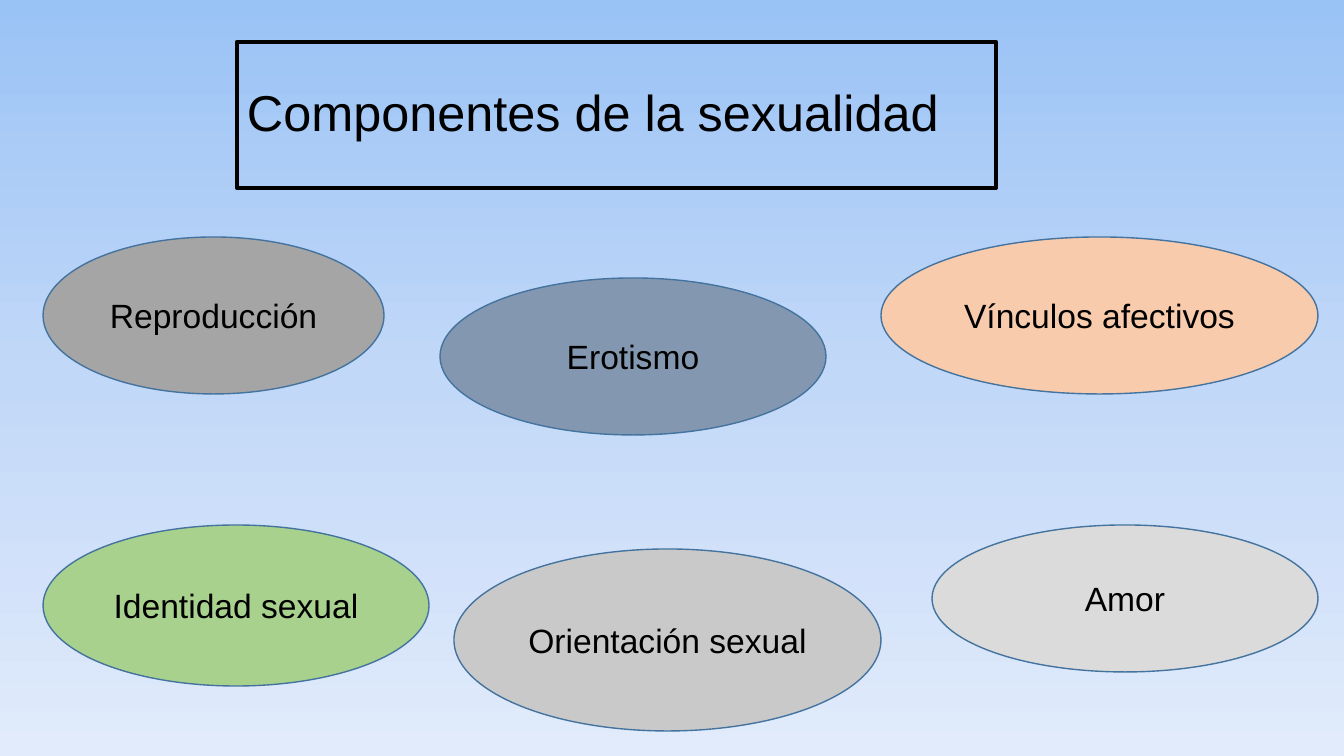
from copy import deepcopy

from pptx import Presentation
from pptx.dml.color import RGBColor
from pptx.enum.shapes import MSO_SHAPE as SHAPE
from pptx.enum.text import MSO_ANCHOR as ANCHOR, PP_ALIGN as ALIGN
from pptx.oxml.ns import qn
from pptx.util import Emu, Pt

BLACK = RGBColor(0x00, 0x00, 0x00)
OUTLINE = RGBColor(0x43, 0x73, 0x9E)
PEACH = RGBColor(0xF8, 0xCB, 0xAD)
PALE_GRAY = RGBColor(0xDB, 0xDB, 0xDB)
GRAY = RGBColor(0xA5, 0xA5, 0xA5)
SLATE = RGBColor(0x84, 0x97, 0xB0)
SILVER = RGBColor(0xC9, 0xC9, 0xC9)
GREEN = RGBColor(0xA9, 0xD1, 0x8E)
SKY = [
    (0, RGBColor(0x9A, 0xC3, 0xF5)),
    (0.5, RGBColor(0xC2, 0xD8, 0xF8)),
    (1, RGBColor(0xE1, 0xEB, 0xFB)),
]

WIDTH, HEIGHT = 1344, 756
LEFT, RIGHT = 43, 1318
UPPER, LOWER = 237, 525

# text, left, top, width, height, fill
COMPONENTS = [
    ("Vínculos afectivos", RIGHT - 437, UPPER, 437, 157, PEACH),
    ("Amor", RIGHT - 386, LOWER, 386, 147, PALE_GRAY),
    ("Reproducción", LEFT, UPPER, 341, 157, GRAY),
    ("Erotismo", 440, 278, 386, 157, SLATE),
    ("Orientación sexual", 454, 549, 427, 182, SILVER),
    ("Identidad sexual", LEFT, LOWER, 386, 161, GREEN),
]


def px(n):
    return Emu(round(n * 914400 / 100.8))


class Deck:
    font = "Arial"

    def __init__(self):
        self.prs = Presentation()
        self.prs.slide_width, self.prs.slide_height = px(WIDTH), px(HEIGHT)
        self.s = self.prs.slides.add_slide(self.prs.slide_layouts[6])

    def background(self, stops):
        """Fill the slide with a three-stop gradient from top to bottom."""
        fill = self.s.background.fill
        fill.gradient()
        fill.gradient_angle = 270
        first = self.s.element.find(".//" + qn("a:gs"))
        first.addnext(deepcopy(first))
        for stop, (position, color) in zip(fill.gradient_stops, stops):
            stop.position = position
            stop.color.rgb = color

    def shape(self, kind, text, box, size, align, line, weight, fill=None):
        sp = self.s.shapes.add_shape(kind, *map(px, box))
        sp.shadow.inherit = False
        if fill is None:
            sp.fill.background()
        else:
            sp.fill.solid()
            sp.fill.fore_color.rgb = fill
        sp.line.color.rgb = line
        sp.line.width = Pt(weight)
        tf = sp.text_frame
        tf.word_wrap = True
        tf.vertical_anchor = ANCHOR.MIDDLE
        tf.text = text
        p = tf.paragraphs[0]
        p.alignment = align
        font = p.runs[0].font
        font.name, font.size = self.font, Pt(size)
        font.color.rgb = BLACK
        return sp

    def title(self, text, *box):
        sp = self.shape(SHAPE.RECTANGLE, text, box, 36, ALIGN.LEFT, BLACK, 3)
        sp.text_frame.paragraphs[0].line_spacing = 0.9

    def ellipse(self, text, *box, fill):
        self.shape(SHAPE.OVAL, text, box, 24, ALIGN.CENTER, OUTLINE, 1, fill)


def main():
    deck = Deck()
    deck.background(SKY)
    deck.title("Componentes de la sexualidad", 237, 42, 759, 146)
    for text, *box, fill in COMPONENTS:
        deck.ellipse(text, *box, fill=fill)
    deck.prs.save("out.pptx")


if __name__ == "__main__":
    main()
